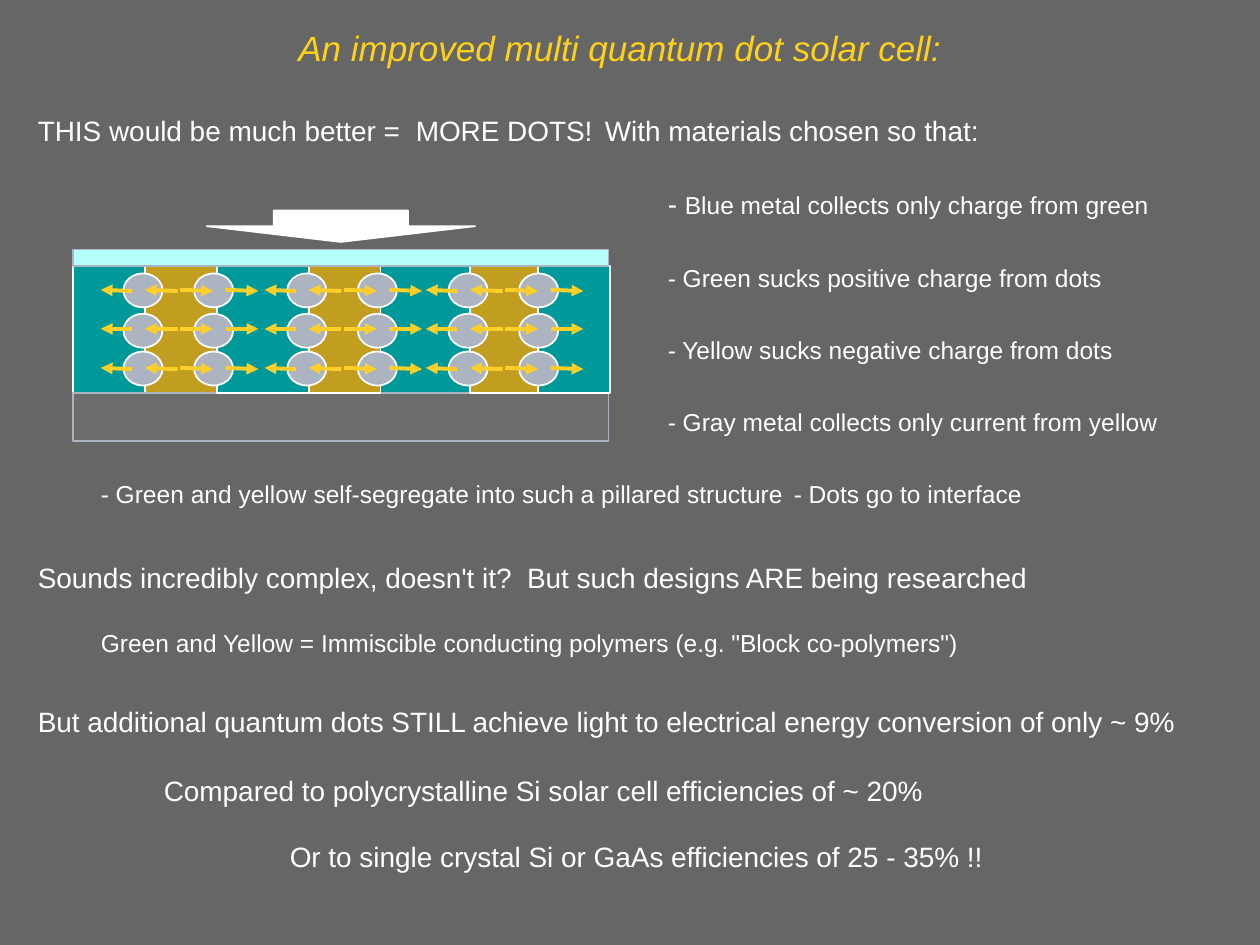
from itertools import product

from lxml.etree import SubElement
from pptx import Presentation
from pptx.dml.color import RGBColor
from pptx.enum.shapes import MSO_CONNECTOR, MSO_SHAPE
from pptx.enum.text import MSO_ANCHOR, PP_ALIGN
from pptx.oxml.ns import qn
from pptx.util import Inches, Pt

COLORS = {
    "background": "666666", "title": "FFD119", "white": "FFFFFF",
    "green": "009999", "yellow": "C19D20", "dot": "ACB3C1",
    "substrate": "6D6D6D", "glass": "B5FFFF", "charge": "FECF29",
}
COLUMNS, ROWS = 100, 75


def write_text(paragraph, text, size=14, color="white", italic=False, indent=0,
               before=0, tabs=(), align=PP_ALIGN.LEFT):
    """Write text into a paragraph; indent and tabs are inches, before is points."""
    paragraph.alignment = align
    paragraph.space_before = Pt(before)
    properties = paragraph._p.get_or_add_pPr()
    properties.set("marL", str(Inches(indent)))
    properties.set("indent", "0")
    if tabs:
        tab_list = SubElement(properties, qn("a:tabLst"))
        for position in tabs:
            SubElement(tab_list, qn("a:tab"), pos=str(Inches(position)), algn="l")
    run = paragraph.add_run()
    run.text = text
    run.font.name = "Arial"
    run.font.size = Pt(size)
    run.font.italic = italic
    run.font.color.rgb = RGBColor.from_string(COLORS[color])
    return paragraph


class SlideBuilder:
    """Draws styled elements on one slide, placed by columns and rows."""

    def __init__(self):
        self.presentation = Presentation()
        self.presentation.slide_width = Inches(10)
        self.presentation.slide_height = Inches(7.5)
        self.slide = self.presentation.slides.add_slide(self.presentation.slide_layouts[6])
        fill = self.slide.background.fill
        fill.solid()
        fill.fore_color.rgb = RGBColor.from_string(COLORS["background"])

    def place(self, column, row):
        return (round(self.presentation.slide_width * column / COLUMNS),
                round(self.presentation.slide_height * row / ROWS))

    def text_box(self, column, row, width, height, anchor=MSO_ANCHOR.TOP):
        box = self.slide.shapes.add_textbox(*self.place(column, row), *self.place(width, height))
        frame = box.text_frame
        frame.word_wrap = True
        frame.vertical_anchor = anchor
        frame.margin_left = frame.margin_right = Inches(0.05)
        frame.margin_top = frame.margin_bottom = Inches(0.05)
        return frame

    def shape(self, kind, column, row, width, height, fill, line="white"):
        shape = self.slide.shapes.add_shape(
            kind, *self.place(column, row), *self.place(width, height))
        shape.shadow.inherit = False
        shape.fill.solid()
        shape.fill.fore_color.rgb = RGBColor.from_string(COLORS[fill])
        shape.line.color.rgb = RGBColor.from_string(COLORS[line])
        shape.line.width = Pt(1)
        return shape

    def arrow(self, start, end):
        connector = self.slide.shapes.add_connector(
            MSO_CONNECTOR.STRAIGHT, *self.place(*start), *self.place(*end))
        connector.line.color.rgb = RGBColor.from_string(COLORS["charge"])
        connector.line.width = Pt(2.25)
        SubElement(connector.line._get_or_add_ln(), qn("a:tailEnd"), type="triangle")
        SubElement(connector._element.spPr, qn("a:effectLst"))


def draw_text(builder):
    """Write the title and the body."""
    title = builder.text_box(1.7, 1.7, 95, 4.2, MSO_ANCHOR.MIDDLE)
    write_text(title.paragraphs[0], "An improved multi quantum dot solar cell:",
               size=20, color="title", italic=True, align=PP_ALIGN.CENTER)

    body = builder.text_box(2.5, 8.5, 95.8, 63.8)
    write_text(body.paragraphs[0],
               "THIS would be much better =\tMORE DOTS!\tWith materials chosen so that:",
               size=16, tabs=(3, 5))
    first_choice = write_text(body.add_paragraph(), "- ", size=16, indent=5, before=22.5)
    write_text(first_choice, "Blue metal collects only charge from green",
               indent=5, before=22.5)
    for choice in ("Green sucks positive charge from dots",
                   "Yellow sucks negative charge from dots",
                   "Gray metal collects only current from yellow"):
        write_text(body.add_paragraph(), f"- {choice}", indent=5, before=24.4)
    write_text(body.add_paragraph(),
               "\t- Green and yellow self-segregate into such a pillared structure"
               "\t- Dots go to interface", before=24.4, tabs=(0.5, 6.5))
    for text, size, indent, before in (
        ("Sounds incredibly complex, doesn't it?  But such designs ARE being researched",
         16, 0, 29.7),
        ('Green and Yellow = Immiscible conducting polymers (e.g. "Block co-polymers")',
         14, 0.5, 19.5),
        ("But additional quantum dots STILL achieve light to electrical energy "
         "conversion of only ~ 9%", 16, 0, 27.1),
        ("Compared to polycrystalline Si solar cell efficiencies of ~ 20%", 16, 1, 19.9),
        ("Or to single crystal Si or GaAs efficiencies of 25 - 35% !!", 16, 2, 18.8),
    ):
        write_text(body.add_paragraph(), text, size=size, indent=indent, before=before)


def draw_cell(builder):
    """Draw the pillared solar cell with its dots and charge arrows."""
    rectangle = MSO_SHAPE.RECTANGLE
    narrow, wide = 5.7, 9.9
    yellow_columns = (11.5, 24.5, 37.3)

    def draw_pillars(pillars):
        for column, width, fill in pillars:
            builder.shape(rectangle, column, 21.1, width, 10.1, fill)

    draw_pillars([(29.9, wide, "green"), (yellow_columns[0], narrow, "yellow"),
                  (5.8, narrow, "green")])
    builder.shape(rectangle, 5.8, 31.2, 42.5, 3.8, "substrate", "dot")
    draw_pillars([(17.2, wide, "green"), (yellow_columns[1], narrow, "yellow"),
                  (yellow_columns[2], narrow, "yellow"), (42.7, narrow, "green")])

    dot_levels = ((21.7, 23, 23.1), (24.9, 26.1, 26.1), (27.9, 29.2, 29.3))
    for column, (dot_row, high, low) in product(yellow_columns, dot_levels):
        for offset in (-1.7, 3.9):
            builder.shape(MSO_SHAPE.OVAL, column + offset, dot_row, 3.1, 2.7, "dot")
        for start, end in ((-1, -3.5), (2.6, 0)):
            builder.arrow((column + start, low), (column + end, high))
        for start, end in ((2.8, 5.4), (6.4, 9)):
            builder.arrow((column + start, high), (column + end, low))

    builder.shape(rectangle, 5.8, 19.8, 42.5, 1.3, "glass", "dot")
    sunlight = builder.shape(MSO_SHAPE.RIGHT_ARROW, 25.8, 7.3, 2.5, 21.3, "white")
    sunlight.rotation = 90


def main():
    """Build the slide and save it."""
    builder = SlideBuilder()
    draw_text(builder)
    draw_cell(builder)
    builder.presentation.save("out.pptx")


if __name__ == "__main__":
    main()
